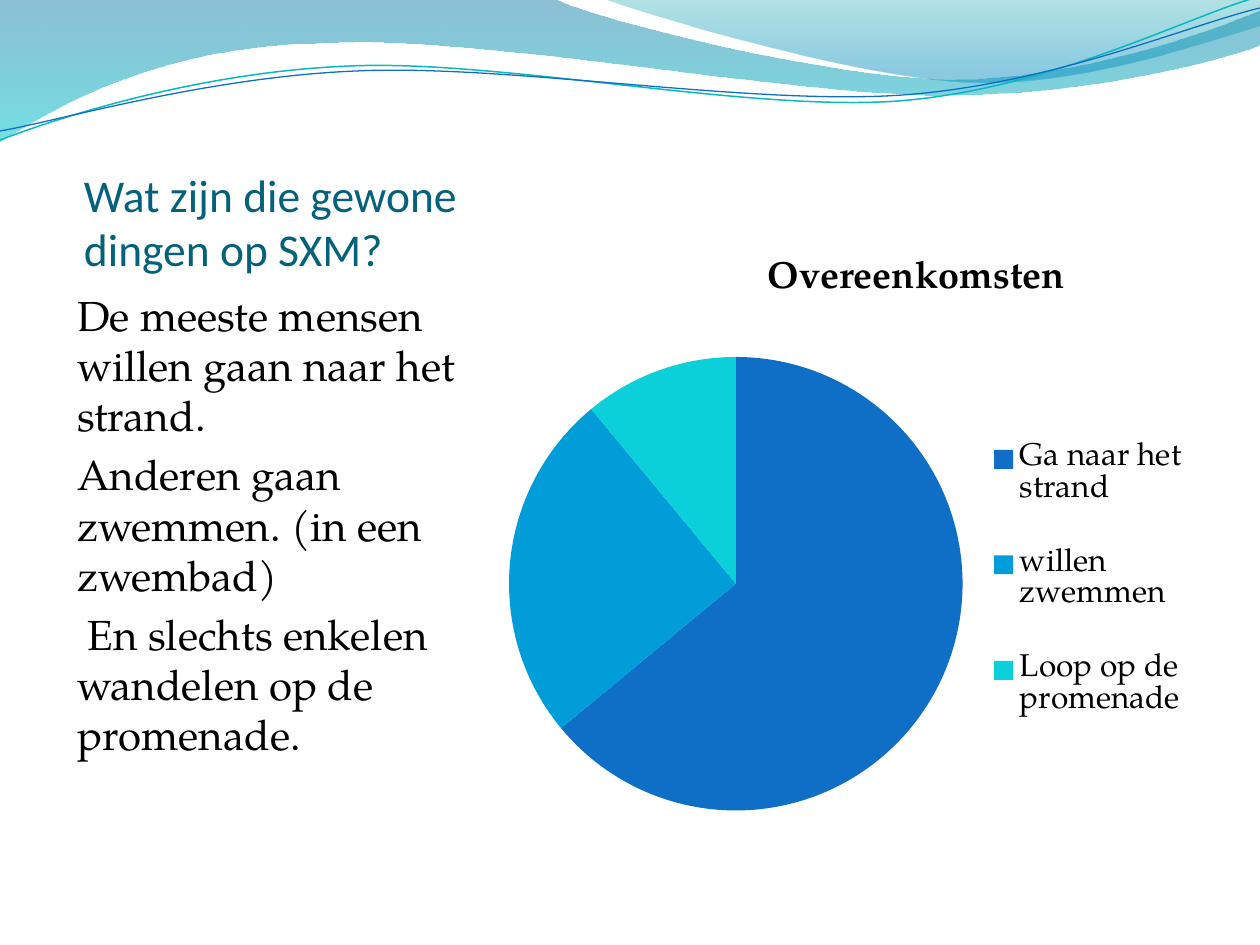
import pptx
import pptx.chart.data
import pptx.dml.color
import pptx.enum.chart
import pptx.enum.text
import pptx.oxml
import pptx.oxml.ns
import pptx.util
from lxml import etree

PX = 914400 / 126
WIDTH, HEIGHT = 1260, 945
HEADING_FONT, BODY_FONT = "Calibri", "TeX Gyre Pagella"
COLORS = {
    "heading": "04617B", "text": "000000",
    "deep": "0074A1", "aqua": "00C6CF", "teal": "00A1A9", "sky": "008BBF",
    "teal_line": "0AB8BF", "blue_line": "0F6FC6",
    "beach": "0F6FC6", "swim": "009DD9", "promenade": "0BD0D9",
}
qn = pptx.oxml.ns.qn


def emu(px):
    return pptx.util.Emu(round(px * PX))


def rgb(name):
    return pptx.dml.color.RGBColor.from_string(COLORS[name])


def place(part, box):
    part.left, part.top, part.width, part.height = map(emu, box)


def format_font(font, size, face=BODY_FONT, color="text", bold=False):
    font.size, font.name, font.bold = pptx.util.Pt(size), face, bold
    font.color.rgb = rgb(color)


def write_text(frame, paragraphs, insets=(0, 6, 0, 6), anchor="TOP", space_before=0, **font):
    frame.word_wrap = True
    frame.auto_size = pptx.enum.text.MSO_AUTO_SIZE.NONE
    frame.vertical_anchor = pptx.enum.text.MSO_ANCHOR[anchor]
    (frame.margin_left, frame.margin_top,
     frame.margin_right, frame.margin_bottom) = map(emu, insets)
    for number, text in enumerate(paragraphs):
        paragraph = frame.add_paragraph() if number else frame.paragraphs[0]
        paragraph.alignment = pptx.enum.text.PP_ALIGN.LEFT
        paragraph.space_before = pptx.util.Pt(space_before)
        run = paragraph.add_run()
        run.text = text
        format_font(run.font, **font)
        # Plain paragraphs: no bullet, no hanging indent
        properties = paragraph._p.get_or_add_pPr()
        properties.set("marL", "0")
        properties.set("indent", "0")
        etree.SubElement(properties, qn("a:buNone"))


def draw_curve(slide, origin, start, segments, close):
    """Draw lines (one point) and cubic curves (three points)."""
    points = [(x + origin[0], y + origin[1])
              for x, y in [start] + [point for segment in segments for point in segment]]
    builder = slide.shapes.build_freeform(*points[0], scale=PX)
    builder.add_line_segments(points[1:], close=close)
    curve = builder.convert_to_shape()
    curve.shadow.inherit = False
    # Fold each run of three line steps into one cubic curve
    steps = iter(list(curve._element.iter(qn("a:lnTo"))))
    for segment in segments:
        group = [next(steps) for _ in segment]
        if len(group) == 3:
            bezier = etree.Element(qn("a:cubicBezTo"))
            group[0].addprevious(bezier)
            for step in group:
                bezier.append(step[0])
                step.getparent().remove(step)
    return curve


def add_wave(slide, origin, start, segments, stops):
    wave = draw_curve(slide, origin, start, segments, True)
    wave.line.fill.background()
    wave.fill.gradient()
    wave.fill.gradient_angle = 270
    for stop, (position, color, _) in zip(wave.fill.gradient_stops, stops):
        stop.position = position
        stop.color.rgb = rgb(color)
    for (_, _, opacity), node in zip(stops, wave._element.spPr.iter(qn("a:srgbClr"))):
        etree.SubElement(node, qn("a:alpha"), val=str(opacity * 1000))


def add_ripple(slide, origin, start, segments, color, weight):
    ripple = draw_curve(slide, origin, start, segments, False)
    ripple.fill.background()
    ripple.line.color.rgb = rgb(color)
    ripple.line.width = pptx.util.Pt(weight)


def add_banner(slide, box):
    origin = box[:2]
    # Broad wave, then the lighter one over its right half
    add_wave(slide, origin, (0, 0), [
        [(554, -1)],
        [(600, 21), (837, 79), (955, 79)], [(1075, 79), (1207, 33), (1260, 11)],
        [(1261, 45)],
        [(1239, 55), (1096, 96), (940, 95)], [(784, 95), (481, 35), (324, 43)],
        [(163, 45), (58, 105), (-1, 142)],
    ], [(0, "deep", 45), (1, "aqua", 55)])
    add_wave(slide, origin, (604, -1), [
        [(641, 14), (859, 78), (969, 82)], [(1079, 87), (1211, 40), (1260, 26)],
        [(1260, 0)],
    ], [(0, "teal", 30), (0.8, "sky", 45)])
    # Thin ripples
    add_ripple(slide, origin, (0, 140), [
        [(60, 117), (199, 72), (349, 66)], [(498, 59), (747, 112), (898, 101)],
        [(1050, 89), (1182, 19), (1257, -3)],
    ], "teal_line", 0.85)
    add_ripple(slide, origin, (0, 131), [
        [(59, 121), (207, 77), (357, 71)], [(508, 64), (752, 106), (903, 95)],
        [(1053, 84), (1186, 26), (1260, 8)],
    ], "blue_line", 0.75)


def add_story(slide, box):
    left, top, width, height = box
    heading, story = list(slide.placeholders)
    # Bring the text in front of the banner
    for part in (heading, story):
        slide.shapes._spTree.append(part._element)
    place(heading, (left + 11, top, width - 21, 160))
    write_text(heading.text_frame, ["Wat zijn die gewone dingen op SXM?"],
               insets=(0, 6, 0, 0), anchor="BOTTOM",
               size=26, face=HEADING_FONT, color="heading")
    place(story, (left, top + 167, width, height - 167))
    write_text(story.text_frame, [
        "De meeste mensen willen gaan naar het strand.",
        "Anderen gaan zwemmen. (in een zwembad)",
        " En slechts enkelen wandelen op de promenade.",
    ], insets=(4, 6, 3, 6), space_before=4.8, size=24)


def set_layout(part, x, y, w=None, h=None, inner=False):
    """Fix a chart part at fractions of the chart area."""
    for old in part.findall(qn("c:layout")):
        part.remove(old)
    layout = etree.Element(qn("c:layout"))
    manual = etree.SubElement(layout, qn("c:manualLayout"))
    settings = [("layoutTarget", "inner")] if inner else []
    settings += [("xMode", "edge"), ("yMode", "edge"), ("x", x), ("y", y)]
    settings += [(tag, value) for tag, value in (("w", w), ("h", h)) if value]
    for tag, value in settings:
        etree.SubElement(manual, qn("c:" + tag), val=str(value))
    before = [child for child in part if child.tag in (qn("c:tx"), qn("c:legendPos"))]
    part.insert(len(before), layout)


def add_pie(slide, box):
    shares = {
        "Ga naar het strand": (64, "beach"),
        "willen zwemmen": (25, "swim"),
        "Loop op de promenade": (11, "promenade"),
    }
    data = pptx.chart.data.CategoryChartData()
    data.categories = list(shares)
    data.add_series("Series 1", [value for value, _ in shares.values()])
    pie = slide.shapes.add_chart(pptx.enum.chart.XL_CHART_TYPE.PIE, *map(emu, box), data).chart
    format_font(pie.font, 18)
    plot = pie.plots[0]
    plot.vary_by_categories = True
    for index, (_, color) in enumerate(shares.values()):
        fill = plot.series[0].points[index].format.fill
        fill.solid()
        fill.fore_color.rgb = rgb(color)
    # Title, legend and pie positions
    pie.has_title = True
    title_run = pie.chart_title.text_frame.paragraphs[0].add_run()
    title_run.text = "Overeenkomsten"
    format_font(title_run.font, 21.6, bold=True)
    pie.has_legend = True
    pie.legend.position = pptx.enum.chart.XL_LEGEND_POSITION.RIGHT
    pie.legend.include_in_layout = False
    set_layout(pie.chart_title._element, 0.38, 0.03)
    set_layout(pie.legend._element, 0.7, 0.27, 0.29, 0.57)
    set_layout(pie._chartSpace.chart.plotArea, 0.02, 0.2, 0.65, 0.72, inner=True)


def main():
    deck = pptx.Presentation()
    deck.slide_width, deck.slide_height = emu(WIDTH), emu(HEIGHT)
    slide = deck.slides.add_slide(deck.slide_layouts[1])
    add_banner(slide, (0, 0, WIDTH, 142))
    add_story(slide, (73, 116, 399, 829))
    add_pie(slide, (493, 231, 704, 630))
    deck.save("out.pptx")


if __name__ == "__main__":
    main()
